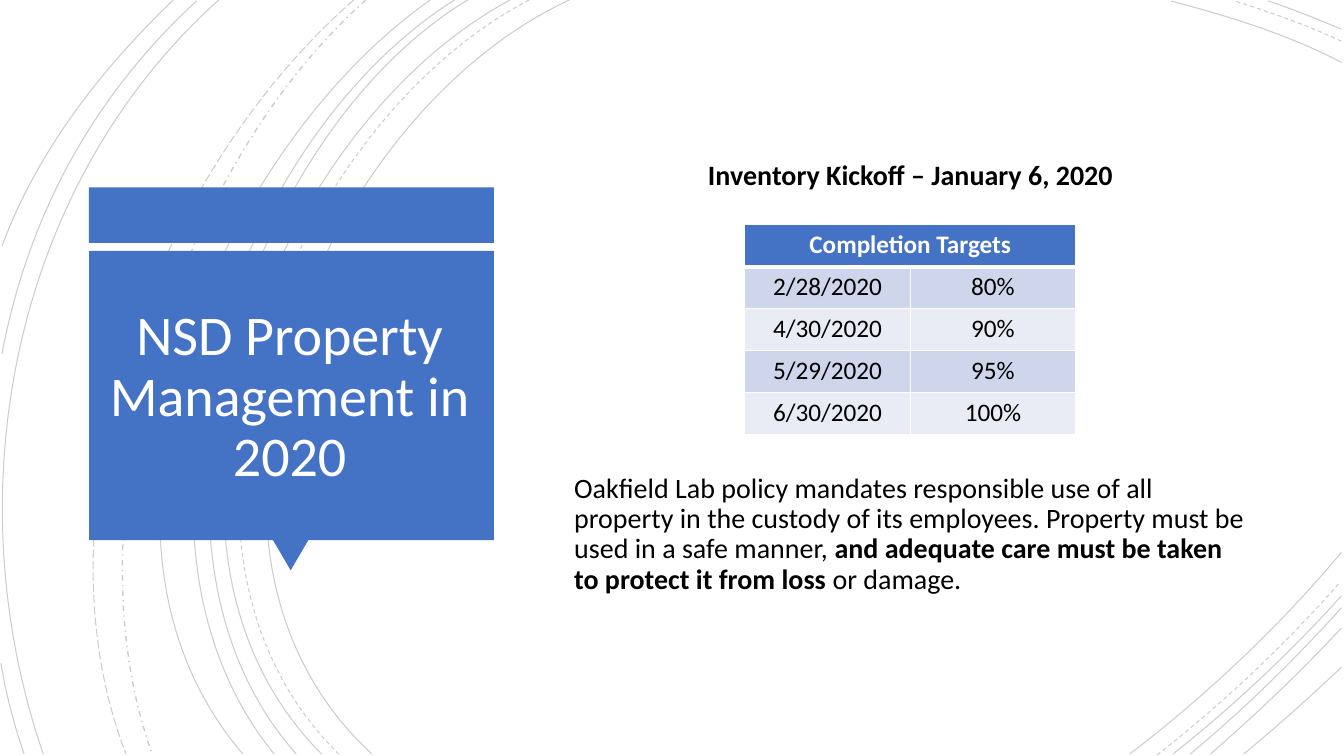
from dataclasses import dataclass

from lxml.etree import SubElement
from pptx import Presentation
from pptx.dml.color import RGBColor
from pptx.enum.dml import MSO_LINE
from pptx.enum.shapes import MSO_SHAPE
from pptx.enum.text import MSO_ANCHOR, PP_ALIGN
from pptx.oxml.ns import qn
from pptx.slide import Slide
from pptx.text.text import TextFrame, _Paragraph as Paragraph
from pptx.util import Cm, Pt

BLACK = RGBColor(0x00, 0x00, 0x00)
WHITE = RGBColor(0xFF, 0xFF, 0xFF)
BLUE = RGBColor(0x44, 0x72, 0xC4)
BANDS = (RGBColor(0xCF, 0xD5, 0xEA), RGBColor(0xE9, 0xEB, 0xF5))
FONT = "Calibri"
CURVE_UNIT = Cm(2.54) / 100
CURVE_OPACITY = 20


@dataclass(frozen=True)
class Curve:
    """A cubic curve: start, two control points and end, in curve units."""
    points: tuple[tuple[int, int], ...]
    dash: MSO_LINE = MSO_LINE.SOLID
    width: float = 0.75


@dataclass(frozen=True)
class Block:
    """A plain blue shape; lengths in centimetres."""
    preset: MSO_SHAPE
    left: float
    top: float
    width: float
    height: float
    rotation: int = 0


@dataclass(frozen=True)
class Target:
    date: str
    share: str


CURVES = (
    Curve(((565, 0), (315, 115), (143, 540), (369, 748))),
    Curve(((1331, 62), (1278, 34), (1218, 16), (1162, 1))),
    Curve(((1121, 748), (1197, 690), (1269, 622), (1331, 548))),
    Curve(((525, 0), (285, 125), (123, 537), (336, 748)), MSO_LINE.DASH),
    Curve(((1331, 41), (1297, 25), (1260, 12), (1225, 1)), MSO_LINE.DASH),
    Curve(((1148, 749), (1213, 698), (1275, 640), (1330, 577)), MSO_LINE.DASH),
    Curve(((506, 0), (270, 127), (110, 537), (319, 748))),
    Curve(((1331, 29), (1307, 19), (1283, 9), (1258, 1))),
    Curve(((1164, 748), (1223, 701), (1280, 648), (1331, 591))),
    Curve(((464, 0), (244, 133), (110, 541), (294, 748))),
    Curve(((1181, 748), (1234, 704), (1284, 655), (1331, 603))),
    Curve(((451, 0), (231, 138), (97, 533), (272, 748))),
    Curve(((1201, 748), (1246, 709), (1290, 667), (1331, 623))),
    Curve(((427, 0), (217, 147), (53, 529), (241, 748))),
    Curve(((1234, 748), (1267, 721), (1299, 692), (1331, 662))),
    Curve(((363, 0), (176, 166), (65, 509), (151, 748)), MSO_LINE.DASH_DOT, 1),
    Curve(((351, 0), (157, 169), (29, 499), (125, 748)), MSO_LINE.LONG_DASH),
    Curve(((217, 0), (11, 185), (-46, 490), (43, 748))),
    Curve(((195, 1), (92, 96), (28, 214), (2, 351))),
    Curve(((1, 658), (6, 689), (14, 719), (24, 748))),
    Curve(((172, 0), (100, 69), (37, 150), (2, 244))),
)

BLOCKS = (
    Block(MSO_SHAPE.RECTANGLE, 2.24, 4.72, 10.21, 1.4),
    Block(MSO_SHAPE.ISOSCELES_TRIANGLE, 6.88, 13.61, 0.89, 0.76, 180),
    Block(MSO_SHAPE.RECTANGLE, 2.25, 6.32, 10.2, 7.29),
)

TARGETS = (
    Target("2/28/2020", "80%"),
    Target("4/30/2020", "90%"),
    Target("5/29/2020", "95%"),
    Target("6/30/2020", "100%"),
)


def add_curve(slide: Slide, curve: Curve) -> None:
    start, *rest = curve.points
    builder = slide.shapes.build_freeform(*start, scale=CURVE_UNIT)
    builder.add_line_segments(rest, close=False)
    sp = builder.convert_to_shape()
    sp.shadow.inherit = False
    sp.fill.background()
    sp.line.color.rgb = BLACK
    sp.line.width = Pt(curve.width)
    sp.line.dash_style = curve.dash
    color = sp.line._get_or_add_ln().find(".//" + qn("a:srgbClr"))
    SubElement(color, qn("a:alpha"), val=str(CURVE_OPACITY * 1000))

    # The three straight segments become one Bezier segment.
    outline = sp._element.find(".//" + qn("a:path"))
    bezier = SubElement(outline, qn("a:cubicBezTo"))
    for segment in outline.findall(qn("a:lnTo")):
        bezier.append(segment[0])
        outline.remove(segment)


def add_block(slide: Slide, block: Block) -> None:
    sp = slide.shapes.add_shape(block.preset, Cm(block.left), Cm(block.top),
                                Cm(block.width), Cm(block.height))
    sp.rotation = block.rotation
    sp.shadow.inherit = False
    sp.fill.solid()
    sp.fill.fore_color.rgb = BLUE
    sp.line.fill.background()


def add_text_box(slide: Slide, left: float, top: float,
                 width: float, height: float) -> TextFrame:
    tf = slide.shapes.add_textbox(Cm(left), Cm(top), Cm(width), Cm(height)).text_frame
    tf.word_wrap = True
    tf.vertical_anchor = MSO_ANCHOR.MIDDLE
    return tf


def add_run(p: Paragraph, text: str, size: int,
            color: RGBColor = BLACK, bold: bool = False) -> None:
    r = p.add_run()
    r.text = text
    r.font.name = FONT
    r.font.size = Pt(size)
    r.font.color.rgb = color
    r.font.bold = bold


def add_title(slide: Slide) -> None:
    p = add_text_box(slide, 2.51, 6.71, 9.58, 6.65).paragraphs[0]
    p.alignment = PP_ALIGN.CENTER
    p.line_spacing = 0.9
    add_run(p, "NSD Property Management in 2020", 40, WHITE)


def add_body(slide: Slide) -> None:
    tf = add_text_box(slide, 14.22, 2.24, 17.45, 14.58)
    kickoff, policy = tf.paragraphs[0], tf.add_paragraph()
    kickoff.alignment = PP_ALIGN.CENTER
    kickoff.space_before = Pt(10)
    policy.space_before = Pt(202)  # leaves room for the table
    kickoff.line_spacing = policy.line_spacing = 0.9
    add_run(kickoff, "Inventory Kickoff – January 6, 2020", 20, bold=True)
    add_run(policy, "Oakfield Lab policy mandates responsible use of all property in the "
                    "custody of its employees. Property must be used in a safe manner, ", 20)
    add_run(policy, "and adequate care must be taken to protect it from loss ", 20, bold=True)
    add_run(policy, "or damage.", 20)


def add_targets(slide: Slide) -> None:
    rows = [("Completion Targets", ""), *((t.date, t.share) for t in TARGETS)]
    table = slide.shapes.add_table(len(rows), 2, Cm(18.77), Cm(5.66),
                                   Cm(8.34), Cm(5.3)).table
    table.cell(0, 0).merge(table.cell(0, 1))
    for i, texts in enumerate(rows):
        header = i == 0
        for j, text in enumerate(texts):
            cell = table.cell(i, j)
            tc_pr = cell._tc.get_or_add_tcPr()
            for side in ("L", "R", "T", "B"):
                thick = (i, side) in ((0, "B"), (1, "T"))
                ln = SubElement(tc_pr, qn(f"a:ln{side}"), w=str(Pt(3 if thick else 1)))
                fill = SubElement(ln, qn("a:solidFill"))
                SubElement(fill, qn("a:srgbClr"), val=str(WHITE))
            cell.fill.solid()
            cell.fill.fore_color.rgb = BLUE if header else BANDS[(i - 1) % 2]
            if text:
                p = cell.text_frame.paragraphs[0]
                p.alignment = PP_ALIGN.CENTER
                add_run(p, text, 18, WHITE if header else BLACK, header)


def main() -> None:
    prs = Presentation()
    prs.slide_width, prs.slide_height = Cm(33.87), Cm(19.05)
    slide = prs.slides.add_slide(prs.slide_layouts[6])
    for curve in CURVES:
        add_curve(slide, curve)
    for block in BLOCKS:
        add_block(slide, block)
    add_title(slide)
    add_body(slide)
    add_targets(slide)
    prs.save("out.pptx")


if __name__ == "__main__":
    main()
